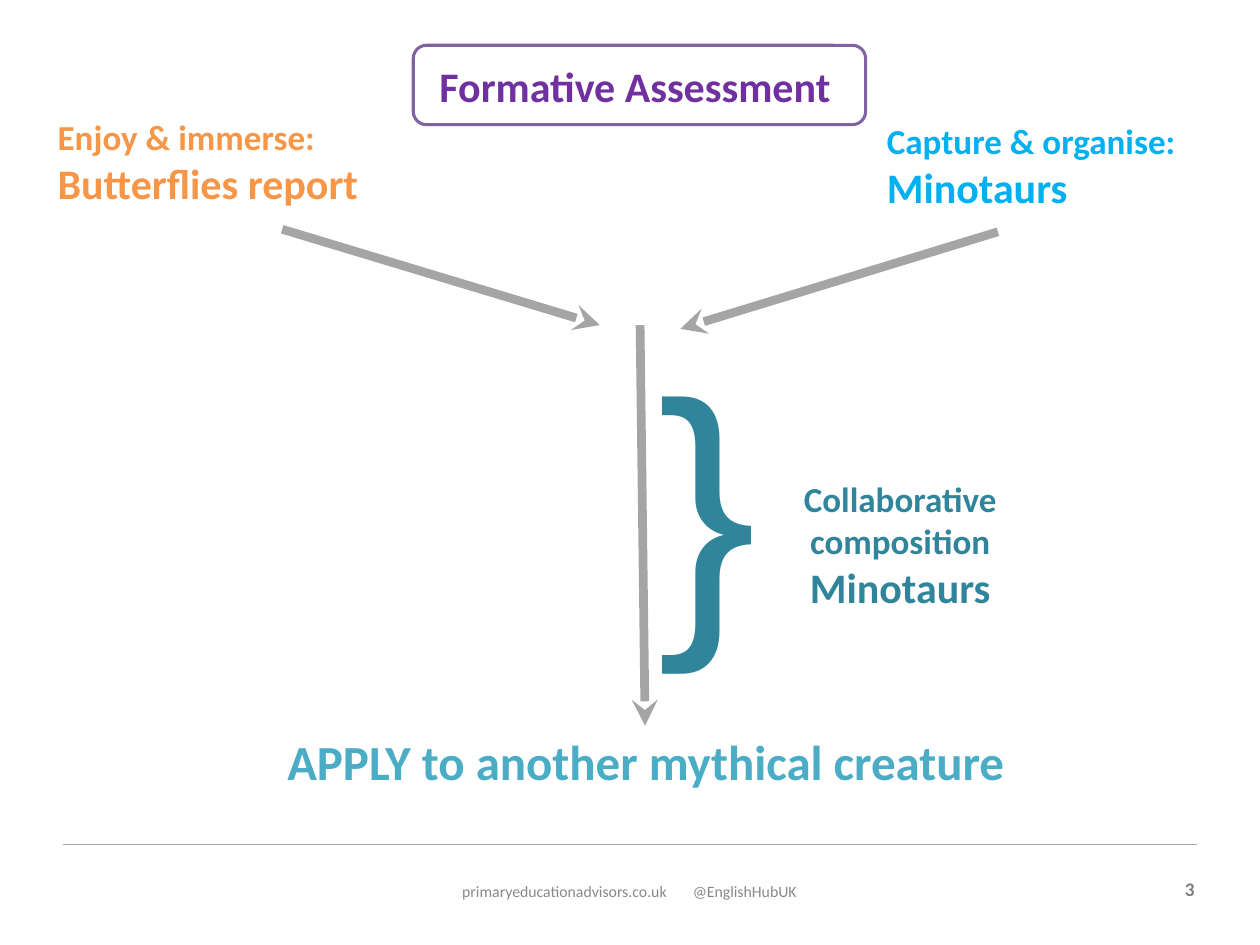
"""Build the formative assessment slide with two inputs leading to one application."""
import pptx
import pptx.dml.color
import pptx.enum.shapes
import pptx.enum.text
import pptx.oxml
import pptx.oxml.ns
import pptx.util

Inches = pptx.util.Inches
Pt = pptx.util.Pt
ALIGN = pptx.enum.text.PP_ALIGN
rgb = pptx.dml.color.RGBColor.from_string
qn = pptx.oxml.ns.qn

THEME = {
    "font": "Calibri", "brace_font": "Arial",
    "white": "FFFFFF", "gray": "A5A5A5", "number": "7F7F7F", "footer": "898989",
    "orange": "F79646", "blue": "00B0F0", "teal": "31859B", "aqua": "4BACC6",
    "purple": "7030A0", "frame": "8064A2",
    "footer_size": 9, "number_size": 11, "label": 20, "topic": 24, "apply": 28, "brace": 170,
}

presentation = pptx.Presentation()
presentation.slide_width = Inches(10)
presentation.slide_height = Inches(7.5)
slide = presentation.slides.add_slide(presentation.slide_layouts[6])


def add_text(box, lines, color, align=ALIGN.LEFT, bold=True, font="font", tab=None):
    shape = slide.shapes.add_textbox(*map(Inches, box))
    frame = shape.text_frame
    frame.word_wrap = True
    for index, (text, size) in enumerate(lines):
        paragraph = frame.paragraphs[0] if index == 0 else frame.add_paragraph()
        paragraph.alignment = align
        if tab:
            properties = paragraph._p.get_or_add_pPr()
            tabs = pptx.oxml.ns.qn("a:tabLst")
            stop = properties.makeelement(tabs, {})
            stop.append(stop.makeelement(qn("a:tab"), {"pos": str(Inches(tab)), "algn": "l"}))
            properties.append(stop)
        run = paragraph.add_run()
        run.text = text
        formats = {"name": THEME[font], "size": Pt(THEME[size]), "bold": bold}
        for name, value in formats.items():
            setattr(run.font, name, value)
        run.font.color.rgb = rgb(THEME[color])


def add_line(start, end, width, arrow=True):
    connector = slide.shapes.add_connector(
        pptx.enum.shapes.MSO_CONNECTOR.STRAIGHT, *map(Inches, start + end))
    connector.line.color.rgb = rgb(THEME["gray"])
    connector.line.width = Pt(width)
    if arrow:
        line = connector.line._get_or_add_ln()
        line.append(line.makeelement(qn("a:tailEnd"), {"type": "stealth"}))
    properties = connector._element.spPr
    properties.append(properties.makeelement(qn("a:effectLst"), {}))


add_line((0.5, 6.7), (9.5, 6.7), 0.75, arrow=False)
add_text((9.2, 6.91, 0.38, 0.29), [("3", "number_size")], "number", ALIGN.RIGHT)
add_text((3.57, 6.95, 3.12, 0.4),
         [("primaryeducationadvisors.co.uk\t@EnglishHubUK", "footer_size")],
         "footer", bold=False, tab=1.83)

add_text((6.94, 0.9, 3.06, 0.74),
         [("Capture & organise:", "label"), ("Minotaurs", "topic")], "blue")
add_text((0.36, 0.87, 2.94, 1.14),
         [("Enjoy & immerse:", "label"), ("Butterflies report", "topic")], "orange")

title_frame = slide.shapes.add_shape(
    pptx.enum.shapes.MSO_SHAPE.ROUNDED_RECTANGLE,
    Inches(3.28), Inches(0.36), Inches(3.59), Inches(0.63))
title_frame.shadow.inherit = False
title_frame.fill.solid()
title_frame.fill.fore_color.rgb = rgb(THEME["white"])
title_frame.line.color.rgb = rgb(THEME["frame"])
title_frame.line.width = Pt(1.75)

add_line((5.08, 2.58), (5.12, 5.76), 5)
add_text((5.78, 3.74, 2.73, 0.91),
         [("Collaborative composition", "label"), ("Minotaurs", "topic")], "teal", ALIGN.CENTER)
add_text((1.4, 5.76, 7.45, 1.18),
         [("APPLY to another mythical creature", "apply")], "aqua", ALIGN.CENTER)
add_text((1.25, 0.43, 7.58, 0.51), [("Formative Assessment", "topic")], "purple", ALIGN.CENTER)
add_text((5.12, 2.45, 0.47, 2.96), [("}", "brace")], "teal", bold=False, font="brace_font")

for start, end in [((2.24, 1.82), (4.76, 2.58)), ((7.92, 1.84), (5.4, 2.61))]:
    add_line(start, end, 5)

presentation.save("out.pptx")
